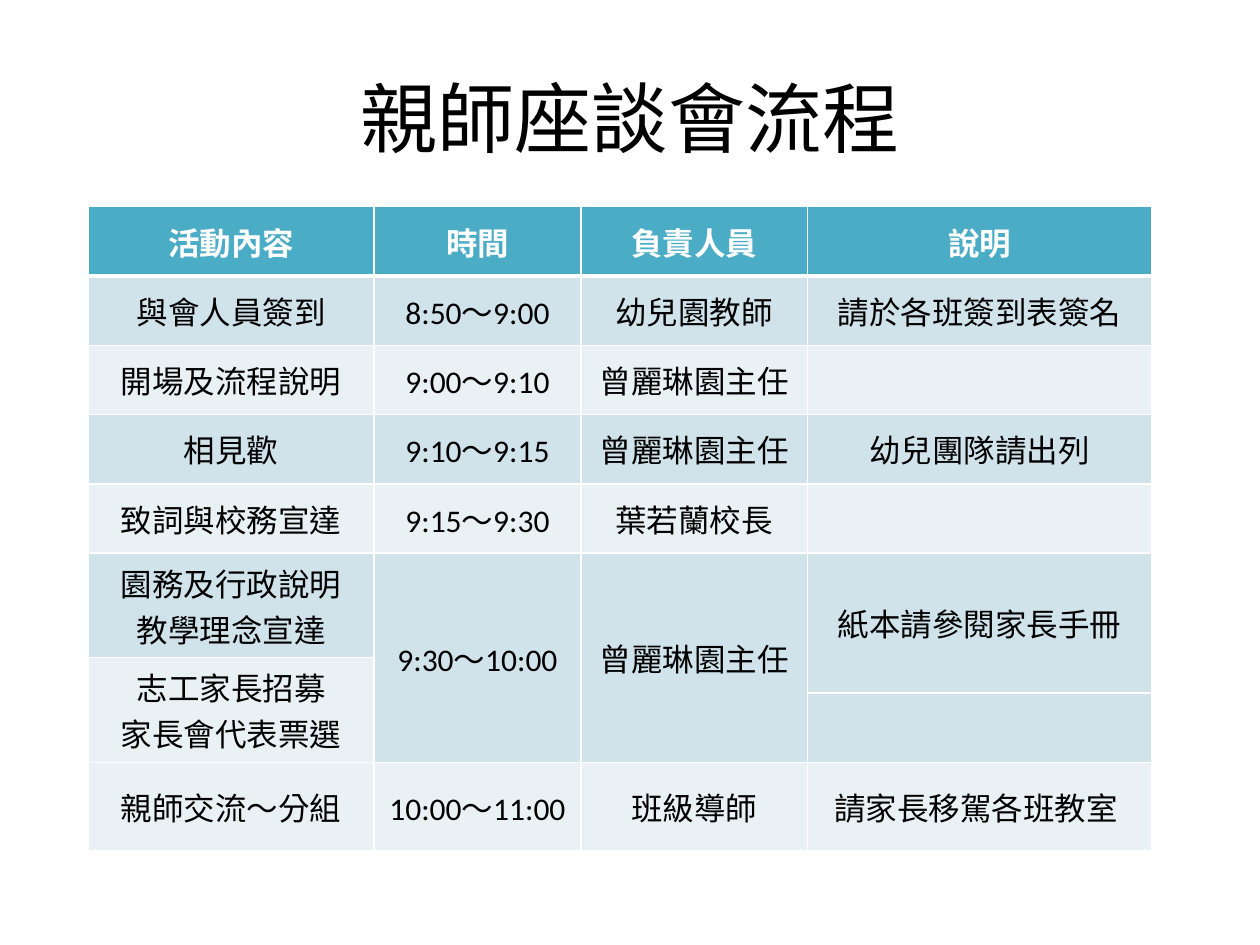
from lxml import etree
from pptx import Presentation
from pptx import util as u
from pptx.dml import color
from pptx.enum import lang, text
from pptx.oxml import ns

HEADER = ["活動內容", "時間", "負責人員", "說明"]
DIRECTOR = "曾麗琳園主任"
AGENDA = [
    HEADER,
    ["與會人員簽到", "8:50～9:00", "幼兒園教師", "請於各班簽到表簽名"],
    ["開場及流程說明", "9:00～9:10", DIRECTOR, ""],
    ["相見歡", "9:10～9:15", DIRECTOR, "幼兒團隊請出列"],
    ["致詞與校務宣達", "9:15～9:30", "葉若蘭校長", ""],
    ["園務及行政說明\n教學理念宣達", "9:30～10:00", DIRECTOR, "紙本請參閱家長手冊"],
    ["志工家長招募\n家長會代表票選", "", "", ""],
    ["", "", "", ""],
    ["親師交流～分組", "10:00～11:00", "班級導師", "請家長移駕各班教室 "],
]
COLUMN_WIDTHS = [2.27, 1.64, 1.8, 2.73]
ROW_HEIGHTS = [0.55] * 5 + [0.83, 0.28, 0.55, 0.55]
MERGES = [(5, 1, 7), (5, 2, 7), (5, 3, 6), (6, 0, 7)]
DARK_BAND, LIGHT_BAND = "D0E3EA", "E9F1F5"
ROW_FILLS = ["4BACC6"] + [DARK_BAND, LIGHT_BAND] * 2 + [DARK_BAND] * 3 + [LIGHT_BAND]


def rgb(value):
    return color.RGBColor.from_string(value)


class SlideBuilder:
    font = "Calibri"
    ink = "000000"
    white = "FFFFFF"

    def __init__(self, presentation):
        self.slide = presentation.slides.add_slide(presentation.slide_layouts[6])

    def set_text(self, frame, content, size, ink, bold=False):
        frame.text = content
        for paragraph in frame.paragraphs:
            paragraph.alignment = text.PP_ALIGN.CENTER
            paragraph.font.size = u.Pt(size)
            for run in paragraph.runs:
                run.font.name = self.font
                run.font.size = u.Pt(size)
                run.font.bold = bold
                run.font.color.rgb = rgb(ink)
                run.font.language_id = lang.MSO_LANGUAGE_ID.TRADITIONAL_CHINESE

    def title(self, content, left, top, width, height):
        shape = self.slide.shapes.add_textbox(*map(u.Inches, (left, top, width, height)))
        shape.text_frame.word_wrap = True
        shape.text_frame.vertical_anchor = text.MSO_ANCHOR.MIDDLE
        self.set_text(shape.text_frame, content, 44, self.ink)

    def borders(self, cell, bottom):
        properties = cell._tc.get_or_add_tcPr()
        widths = {"a:lnL": 1, "a:lnR": 1, "a:lnT": 1, "a:lnB": bottom}
        for index, (tag, width) in enumerate(widths.items()):
            line = etree.Element(ns.qn(tag), w=str(int(u.Pt(width))))
            fill = etree.SubElement(line, ns.qn("a:solidFill"))
            etree.SubElement(fill, ns.qn("a:srgbClr"), val=self.white)
            properties.insert(index, line)

    def table(self, rows, left, top, widths, heights, fills, merges):
        area = (left, top, sum(widths), sum(heights))
        shape = self.slide.shapes.add_table(
            len(rows), len(widths), *map(u.Inches, area))
        table = shape.table
        for column, width in zip(table.columns, widths):
            column.width = u.Inches(width)
        for row, height in zip(table.rows, heights):
            row.height = u.Inches(height)
        for first, column, last in merges:
            table.cell(first, column).merge(table.cell(last, column))
        for row_index, row in enumerate(rows):
            is_header = row_index == 0
            for column_index, content in enumerate(row):
                cell = table.cell(row_index, column_index)
                cell.vertical_anchor = text.MSO_ANCHOR.MIDDLE
                cell.fill.solid()
                is_volunteer = (row_index, column_index) in ((6, 0), (7, 0))
                fill = LIGHT_BAND if is_volunteer else fills[row_index]
                cell.fill.fore_color.rgb = rgb(fill)
                self.borders(cell, 3 if is_header else 1)
                ink = self.white if is_header else self.ink
                self.set_text(cell.text_frame, content, 18, ink, is_header)


def main():
    presentation = Presentation()
    presentation.slide_width = u.Inches(10)
    presentation.slide_height = u.Inches(7.5)
    builder = SlideBuilder(presentation)
    builder.title("親師座談會流程", 0.5, 0.3, 9, 1.25)
    builder.table(AGENDA, 0.7, 1.64, COLUMN_WIDTHS, ROW_HEIGHTS, ROW_FILLS, MERGES)
    presentation.save("out.pptx")


if __name__ == "__main__":
    main()
